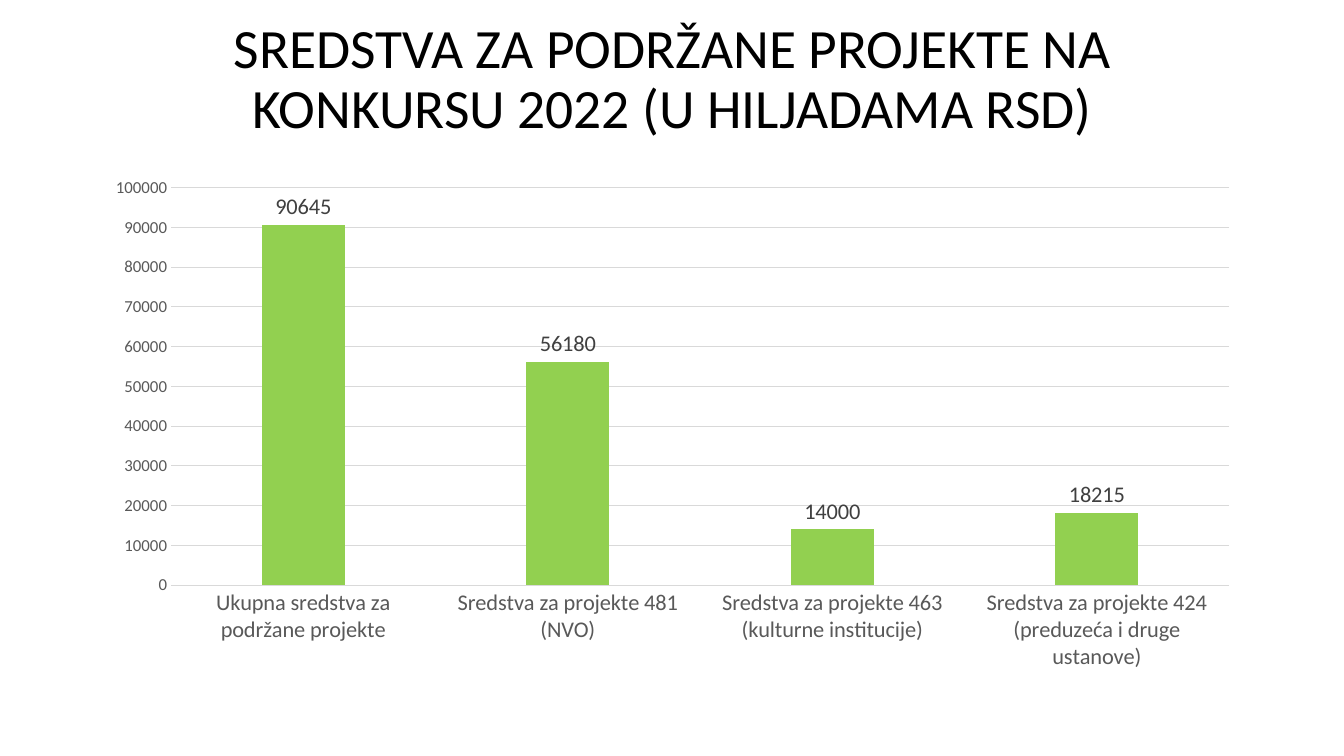
from dataclasses import dataclass

from pptx import Presentation
from pptx import util as u
from pptx.chart import data
from pptx.dml import color
from pptx.enum import chart as charts, text


@dataclass(frozen=True)
class Theme:
    font: str = "Calibri"
    title_color: str = "000000"
    axis_color: str = "595959"
    label_color: str = "404040"
    grid_color: str = "D9D9D9"
    bar_color: str = "92D050"
    title_size: float = 39.6
    label_size: float = 16
    scale_size: float = 12


THEME = Theme()
TITLE = "SREDSTVA ZA PODRŽANE PROJEKTE NA KONKURSU 2022 (U HILJADAMA RSD)"
FUNDS = {
    "Ukupna sredstva za podržane projekte": 90645,
    "Sredstva za projekte 481 (NVO)": 56180,
    "Sredstva za projekte 463 (kulturne institucije)": 14000,
    "Sredstva za projekte 424 (preduzeća i druge ustanove)": 18215,
}
LEFT, WIDTH = u.Inches(0.92), u.Inches(11.5)


def style_font(font, size, rgb):
    font.name = THEME.font
    font.size = u.Pt(size)
    font.bold = False
    font.color.rgb = color.RGBColor.from_string(rgb)


def style_line(line):
    line.width = u.Pt(0.75)
    line.color.rgb = color.RGBColor.from_string(THEME.grid_color)


def set_title(slide):
    title = slide.shapes.title
    title.left, title.top = LEFT, u.Inches(0.4)
    title.width, title.height = WIDTH, u.Inches(1.45)
    frame = title.text_frame
    frame.text = TITLE
    frame.word_wrap = True
    frame.auto_size = text.MSO_AUTO_SIZE.NONE
    frame.vertical_anchor = text.MSO_ANCHOR.MIDDLE
    frame.margin_bottom = u.Inches(0.7)
    para = frame.paragraphs[0]
    para.alignment = text.PP_ALIGN.CENTER
    para.line_spacing = 0.9
    style_font(para.runs[0].font, THEME.title_size, THEME.title_color)


def style_axes(chart):
    category, value = chart.category_axis, chart.value_axis
    for axis, size in ((category, THEME.label_size), (value, THEME.scale_size)):
        axis.major_tick_mark = charts.XL_TICK_MARK.NONE
        axis.minor_tick_mark = charts.XL_TICK_MARK.NONE
        style_font(axis.tick_labels.font, size, THEME.axis_color)
    style_line(category.format.line)
    value.format.line.fill.background()
    value.minimum_scale, value.maximum_scale = 0, 100000
    value.major_unit = 10000
    style_line(value.major_gridlines.format.line)


def style_bars(plot):
    plot.gap_width, plot.overlap = 219, -27
    plot.vary_by_categories = False
    bars = plot.series[0]
    bars.format.fill.solid()
    bars.format.fill.fore_color.rgb = color.RGBColor.from_string(THEME.bar_color)
    labels = bars.data_labels
    labels.show_value = True
    labels.position = charts.XL_LABEL_POSITION.OUTSIDE_END
    style_font(labels.font, THEME.label_size, THEME.label_color)


def add_funds_chart(slide):
    funds = data.CategoryChartData()
    funds.categories = list(FUNDS)
    funds.add_series("Series 1", list(FUNDS.values()))
    chart = slide.shapes.add_chart(
        charts.XL_CHART_TYPE.COLUMN_CLUSTERED,
        LEFT, u.Inches(1.66), WIDTH, u.Inches(5.1), funds,
    ).chart
    chart.has_title = False
    chart.has_legend = False
    style_font(chart.font, 10, THEME.title_color)
    style_axes(chart)
    style_bars(chart.plots[0])


def main():
    deck = Presentation()
    deck.slide_width, deck.slide_height = u.Inches(13.33), u.Inches(7.5)
    slide = deck.slides.add_slide(deck.slide_layouts.get_by_name("Title Only"))
    set_title(slide)
    add_funds_chart(slide)
    deck.save("out.pptx")


if __name__ == "__main__":
    main()
